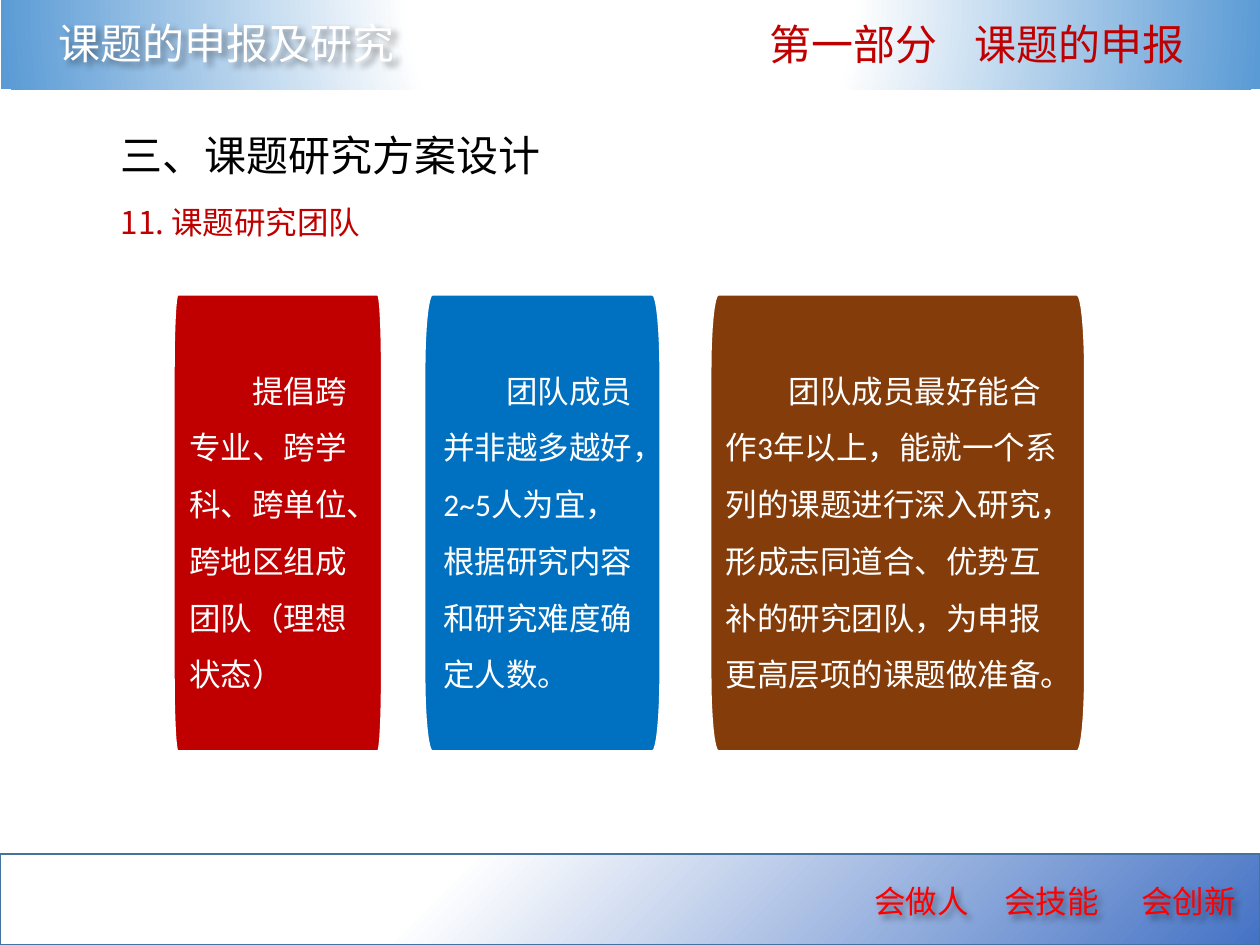
"""Build the slide on research teams for project applications."""
import math

from lxml import etree
from pptx import Presentation
from pptx.dml.color import RGBColor
from pptx.enum.shapes import MSO_SHAPE
from pptx.enum.text import MSO_ANCHOR, MSO_AUTO_SIZE, PP_ALIGN
from pptx.oxml import parse_xml
from pptx.oxml.ns import nsdecls, qn
from pptx.util import Inches, Pt

RECT = MSO_SHAPE.RECTANGLE
TOP, MIDDLE = MSO_ANCHOR.TOP, MSO_ANCHOR.MIDDLE
NO_FIT = MSO_AUTO_SIZE.NONE
LEFT = PP_ALIGN.LEFT

WHITE = RGBColor(0xFF, 0xFF, 0xFF)
BLACK = RGBColor(0x00, 0x00, 0x00)
RED = RGBColor(0xFF, 0x00, 0x00)
DARK_RED = RGBColor(0xC0, 0x00, 0x00)
BLUE = RGBColor(0x00, 0x70, 0xC0)
BROWN = RGBColor(0x84, 0x3C, 0x0B)
SKY = RGBColor(0x5B, 0x9B, 0xD5)
INDIGO = RGBColor(0x44, 0x72, 0xC4)
STEEL = RGBColor(0x43, 0x73, 0x9E)

CJK = "Noto Sans CJK SC"
CJK_JP = "Noto Sans CJK JP"
LATIN = "Calibri"

PANEL_TOP, PANEL_HEIGHT, CORNER_HEIGHT = 2.34, 3.62, 0.6
CORNER_STEPS = 8
PANELS = [
    (1.38, 1.65, 0.03, 0.12, DARK_RED,
     "提倡跨专业、跨学科、跨单位、跨地区组成团队（理想状态）"),
    (3.37, 1.87, 0.06, 0.15, BLUE,
     "团队成员并非越多越好，2~5人为宜，根据研究内容和研究难度确定人数。"),
    (5.64, 2.97, 0.06, 0.12, BROWN,
     "团队成员最好能合作3年以上，能就一个系列的课题进行深入研究，"
     "形成志同道合、优势互补的研究团队，为申报更高层项的课题做准备。"),
]


class SlideBuilder:
    """Holds the current slide and draws its kinds of element."""

    def __init__(self, slide):
        self.slide = slide
        self.shapes = slide.shapes

    def style(self, p, size, color, latin=CJK, east_asian=CJK):
        for r in p.runs:
            r.font.size = Pt(size)
            r.font.color.rgb = color
            r.font.name = latin
            ea = etree.SubElement(r.font._element, qn("a:ea"))
            ea.set("typeface", east_asian)

    def shadow(self, sp, distance, angle):
        sp.shadow.inherit = False
        effects = sp._element.spPr.find(qn("a:effectLst"))
        effects.append(parse_xml(
            f'<a:outerShdw {nsdecls("a")} blurRad="{Pt(4)}" dist="{Pt(distance)}" '
            f'dir="{angle * 60000}" algn="tl" rotWithShape="0">'
            '<a:srgbClr val="000000"><a:alpha val="38000"/></a:srgbClr>'
            '</a:outerShdw>'))

    def band(self, left, top, color, focus, line=None):
        sp = self.shapes.add_shape(RECT, Inches(left), Inches(top), Inches(10), Inches(0.72))
        sp.shadow.inherit = False
        sp.fill.background()
        spPr = sp._element.spPr
        stops = "".join(
            f'<a:gs pos="{pos * 1000}"><a:srgbClr val="{c}"/></a:gs>'
            for pos, c in ((0, WHITE), (35, WHITE), (100, color)))
        sides = " ".join(f'{k}="{v * 1000}"' for k, v in zip("ltrb", focus))
        spPr.replace(spPr.find(qn("a:noFill")), parse_xml(
            f'<a:gradFill {nsdecls("a")} rotWithShape="1"><a:gsLst>{stops}</a:gsLst>'
            f'<a:path path="circle"><a:fillToRect {sides}/></a:path></a:gradFill>'))
        if line is None:
            sp.line.fill.background()
        else:
            sp.line.color.rgb = line
            sp.line.width = Pt(1)
        return sp

    def title(self, text, left, top, width, height):
        sp = self.shapes.title
        sp.left, sp.top, sp.width, sp.height = map(Inches, (left, top, width, height))
        tf = sp.text_frame
        tf.text = text
        tf.vertical_anchor = TOP
        tf.auto_size = NO_FIT
        p = tf.paragraphs[0]
        p.alignment = LEFT
        self.style(p, 24, BLACK)

    def label(self, text, left, top, width, height, size, color, font=CJK, tabs=()):
        sp = self.shapes.add_textbox(*map(Inches, (left, top, width, height)))
        tf = sp.text_frame
        tf.text = text
        tf.word_wrap = True
        p = tf.paragraphs[0]
        if tabs:
            tab_list = etree.SubElement(p._p.get_or_add_pPr(), qn("a:tabLst"))
            for pos in tabs:
                etree.SubElement(tab_list, qn("a:tab"), pos=str(Inches(pos)), algn="l")
        self.style(p, size, color, font, font)
        return sp

    def panel(self, left, width, corner, inset, color, text):
        right, bottom = left + width, PANEL_TOP + PANEL_HEIGHT
        centers = [
            (right - corner, bottom - CORNER_HEIGHT), (left + corner, bottom - CORNER_HEIGHT),
            (left + corner, PANEL_TOP + CORNER_HEIGHT), (right - corner, PANEL_TOP + CORNER_HEIGHT),
        ]
        points = []
        for quarter, (cx, cy) in enumerate(centers):
            for step in range(CORNER_STEPS + 1):
                angle = (quarter + step / CORNER_STEPS) * math.pi / 2
                points.append((Inches(cx + corner * math.cos(angle)),
                               Inches(cy + CORNER_HEIGHT * math.sin(angle))))
        builder = self.shapes.build_freeform(*points[0])
        builder.add_line_segments(points[1:], close=True)
        sp = builder.convert_to_shape()
        sp.shadow.inherit = False
        sp.fill.solid()
        sp.fill.fore_color.rgb = color
        sp.line.color.rgb = WHITE
        sp.line.width = Pt(1)
        tf = sp.text_frame
        tf.text = text
        tf.word_wrap = True
        tf.vertical_anchor = MIDDLE
        tf.margin_left = tf.margin_right = tf.margin_top = tf.margin_bottom = Inches(inset)
        p = tf.paragraphs[0]
        p.alignment = LEFT
        p.line_spacing = 1.5
        p.space_after = Pt(6)
        p._p.get_or_add_pPr().set("indent", str(Inches(0.5)))
        self.style(p, 18, WHITE, LATIN)


def main():
    prs = Presentation()
    prs.slide_width, prs.slide_height = Inches(10), Inches(7.5)
    s = SlideBuilder(prs.slides.add_slide(prs.slide_layouts[5]))

    footer = s.band(0, 6.78, INDIGO, (0, 0, 100, 100), STEEL)
    s.shadow(footer, 4, 90)
    motto = s.label("会做人\t会技能\t会创新", 6.84, 6.95, 3.45, 0.4, 18, RED, CJK_JP, (1.03, 2.12))
    s.shadow(motto, 3, 45)

    s.band(0.01, -0.01, SKY, (50, -80, 50, 180))
    course = s.label("课题的申报及研究", 0.37, 0.09, 3.27, 0.5, 24, WHITE)
    s.shadow(course, 3, 45)
    s.label("第一部分\t课题的申报", 6.01, 0.1, 3.73, 0.5, 24, DARK_RED, tabs=(1.63,))

    s.title("三、课题研究方案设计", 0.86, 0.98, 3.96, 0.5)
    s.label("11. 课题研究团队", 0.86, 1.56, 3.74, 0.52, 18, DARK_RED)
    for panel in PANELS:
        s.panel(*panel)

    prs.save("out.pptx")


if __name__ == "__main__":
    main()
